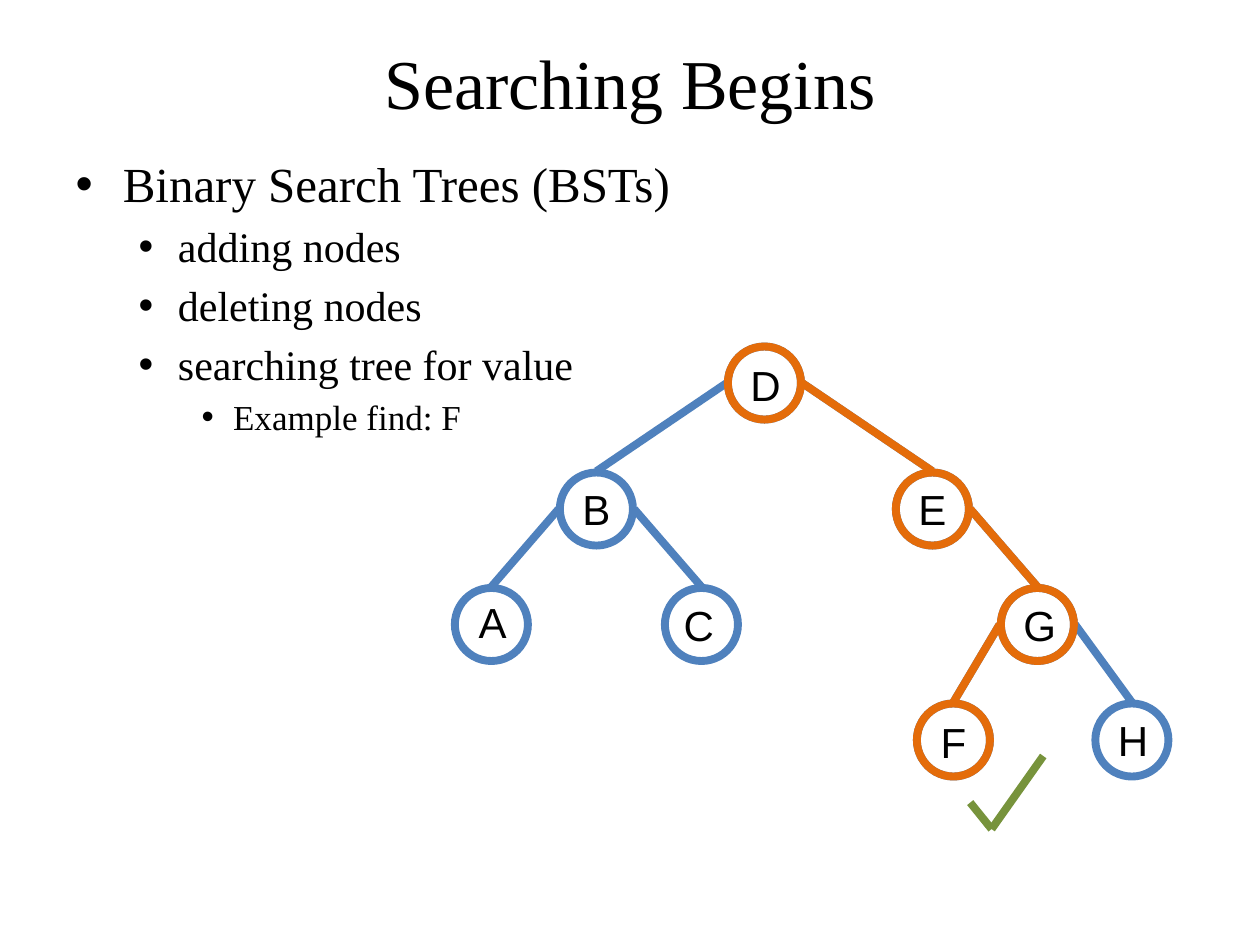
"""Build the slide on searching a binary search tree."""
from lxml.etree import SubElement
from pptx import Presentation
from pptx.dml.color import RGBColor
from pptx.enum.shapes import MSO_CONNECTOR, MSO_SHAPE
from pptx.enum.text import MSO_ANCHOR, MSO_AUTO_SIZE, PP_ALIGN
from pptx.oxml.ns import qn
from pptx.util import Inches, Pt

BLACK = RGBColor(0x00, 0x00, 0x00)
BLUE = RGBColor(0x4F, 0x81, 0xBD)
ORANGE = RGBColor(0xE4, 0x6C, 0x0A)
GREEN = RGBColor(0x77, 0x93, 0x3C)

WIDTH, HEIGHT = 10, 7.5
GRID = 1 / 12
LEFT, TOP = 3.9, 3.04
DIAMETER, REACH = 0.58, 0.3
LABEL_W, LABEL_H = 0.44, 0.5

NODES = {"D": (26, 0), "B": (10, 12), "E": (42, 12), "A": (0, 23),
         "C": (20, 23), "G": (52, 23), "F": (44, 34), "H": (61, 34)}
NUDGES = {"A": (0.01, -0.02), "C": (-0.02, 0), "D": (0.01, 0.01),
          "F": (0, 0.01), "G": (0.01, 0), "H": (0.01, 0)}
EDGES = ["DB", "DE", "BA", "BC", "EG", "GF", "GH"]
FOUND = "DEGF"
CHECK = [(7.7, 6.37), (7.87, 6.58), (8.28, 6)]
BULLETS = [(0, 28, "Binary Search Trees (BSTs)"), (1, 24, "adding nodes"),
           (1, 24, "deleting nodes"), (1, 24, "searching tree for value"),
           (2, 20, "Example find: F")]


def center(name):
    col, row = NODES[name]
    return LEFT + col * GRID, TOP + row * GRID


def place(sp, left, top, width, height):
    sp.left, sp.top = Inches(left), Inches(top)
    sp.width, sp.height = Inches(width), Inches(height)


def add_run(p, text, size, font):
    r = p.add_run()
    r.text = text
    r.font.size, r.font.name = Pt(size), font
    r.font.color.rgb = BLACK


def add_title(s, text):
    sp = s.shapes.title
    place(sp, 0.05 * WIDTH, 0.04 * HEIGHT, 0.9 * WIDTH, 0.7)
    sp.text_frame.vertical_anchor = MSO_ANCHOR.MIDDLE
    p = sp.text_frame.paragraphs[0]
    p.alignment = PP_ALIGN.CENTER
    add_run(p, text, 40, "Times New Roman")


def add_bullets(s, items):
    sp = s.placeholders[1]
    place(sp, 0.05 * WIDTH, 1.17, 0.9 * WIDTH, 5.53)
    tf = sp.text_frame
    for i, (level, size, text) in enumerate(items):
        p = tf.add_paragraph() if i else tf.paragraphs[0]
        p.level = level
        SubElement(p._p.get_or_add_pPr(), qn("a:buChar"), char="•")
        add_run(p, text, size, "Times New Roman")


def add_circle(group, name, color):
    x, y = center(name)
    sp = group.shapes.add_shape(
        MSO_SHAPE.OVAL, Inches(x - DIAMETER / 2), Inches(y - DIAMETER / 2),
        Inches(DIAMETER), Inches(DIAMETER))
    sp.shadow.inherit = False
    sp.fill.background()
    sp.line.color.rgb, sp.line.width = color, Pt(4.5)


def add_label(group, name):
    x, y = center(name)
    dx, dy = NUDGES.get(name, (0, 0))
    sp = group.shapes.add_textbox(
        Inches(x + dx - LABEL_W / 2), Inches(y + dy - LABEL_H / 2),
        Inches(LABEL_W), Inches(LABEL_H))
    tf = sp.text_frame
    tf.word_wrap = False
    tf.auto_size = MSO_AUTO_SIZE.SHAPE_TO_FIT_TEXT
    tf.vertical_anchor = MSO_ANCHOR.MIDDLE
    p = tf.paragraphs[0]
    p.alignment = PP_ALIGN.CENTER
    add_run(p, name, 24, "Arial")


def add_line(group, start, end, color):
    line = group.shapes.add_connector(
        MSO_CONNECTOR.STRAIGHT, *map(Inches, (*start, *end)))
    line.line.color.rgb, line.line.width = color, Pt(4.5)
    SubElement(line._element.spPr, qn("a:effectLst"))


def add_edge(group, parent, child, color):
    (px, py), (cx, cy) = center(parent), center(child)
    side = REACH if cx > px else -REACH
    add_line(group, (px + side, py), (cx, cy - REACH), color)


def add_tree(s, circles, labels, edges, color):
    group = s.shapes.add_group_shape()
    for name in circles:
        add_circle(group, name, color)
    for name in labels:
        add_label(group, name)
    for parent, child in edges:
        add_edge(group, parent, child, color)
    return group


def main():
    prs = Presentation()
    prs.slide_width, prs.slide_height = Inches(WIDTH), Inches(HEIGHT)
    s = prs.slides.add_slide(prs.slide_layouts[1])
    add_title(s, "Searching Begins")
    add_bullets(s, BULLETS)
    add_tree(s, NODES, "HCAB", EDGES, BLUE)
    found_edges = [edge for edge in EDGES if set(edge) <= set(FOUND)]
    group = add_tree(s, FOUND, FOUND, found_edges, ORANGE)
    for start, end in zip(CHECK, CHECK[1:]):
        add_line(group, start, end, GREEN)
    prs.save("out.pptx")


if __name__ == "__main__":
    main()
